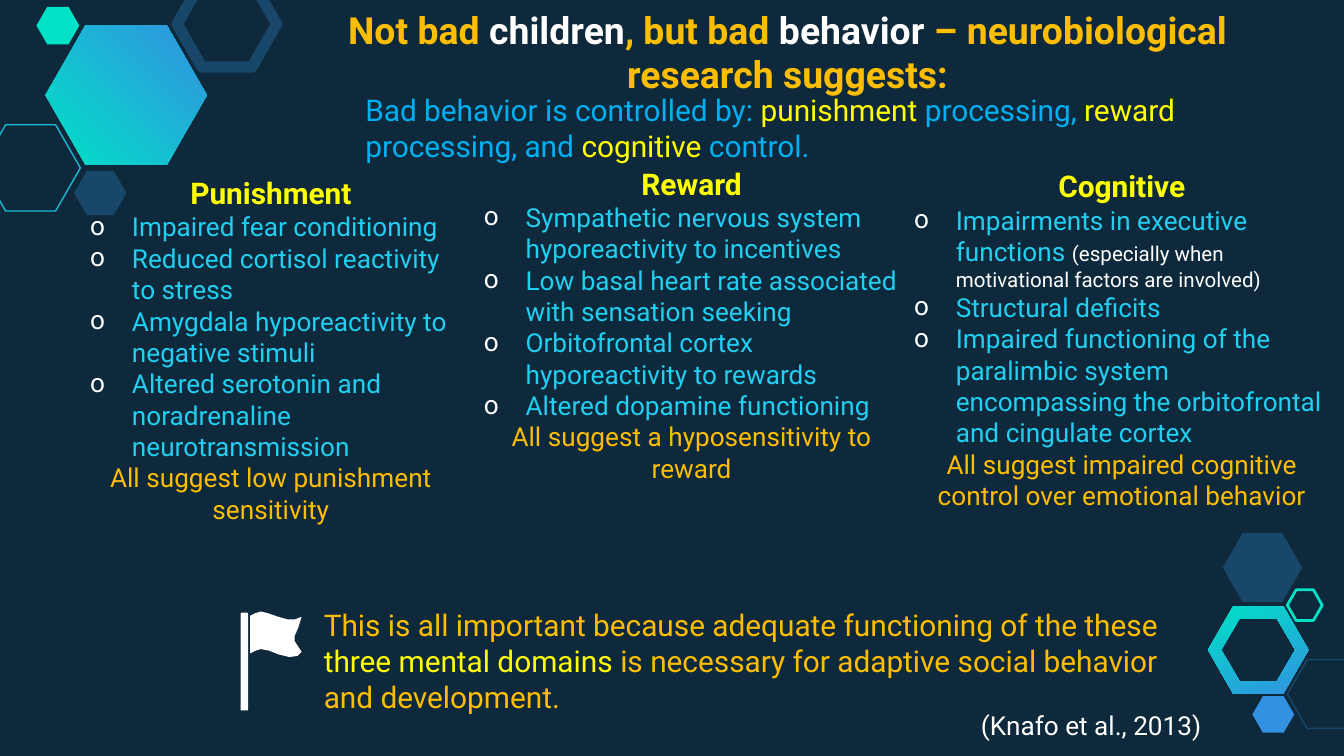
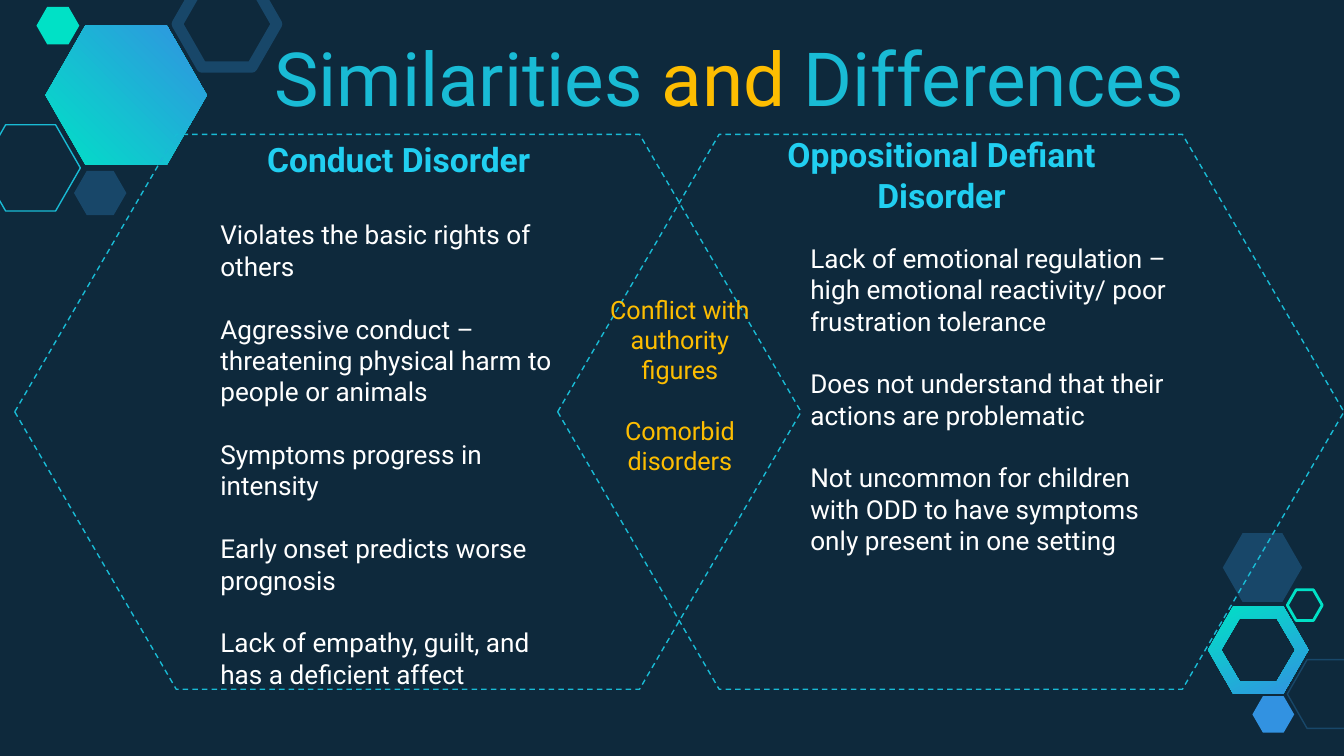
from dataclasses import dataclass
from lxml import etree
from pptx import Presentation
from pptx.dml.color import RGBColor
from pptx.enum.dml import MSO_LINE
from pptx.enum.shapes import MSO_SHAPE
from pptx.enum.text import MSO_ANCHOR, MSO_AUTO_SIZE, PP_ALIGN
from pptx.oxml.ns import qn
from pptx.util import Cm, Pt

HEXAGON = MSO_SHAPE.HEXAGON
FLAGPOLE = MSO_SHAPE.ROUND_2_SAME_RECTANGLE
DASH = MSO_LINE.DASH
TOP, BOTTOM = MSO_ANCHOR.TOP, MSO_ANCHOR.BOTTOM
LEFT, CENTER = PP_ALIGN.LEFT, PP_ALIGN.CENTER
COMPARISON_LAYOUT = 4


@dataclass(frozen=True)
class Theme:
    font: str = "Roboto"
    background: str = "0E293C"
    navy: str = "184769"
    blue: str = "3292E1"
    mint: str = "00E1C6"
    teal: str = "19BBD5"
    sky: str = "00B0F0"
    cyan: str = "21CFF1"
    gold: str = "FDBD01"
    yellow: str = "FFFF00"
    white: str = "FFFFFF"
    display: float = 40
    title: float = 20
    heading: float = 18
    lead: float = 16
    body: float = 14
    shared: float = 13.5
    aside: float = 11


@dataclass(frozen=True)
class Box:
    left: float
    top: float
    width: float
    height: float

    def inner(self, left, top, width, height):
        return Box(self.left + left, self.top + top, width, height)

    def lengths(self):
        return Cm(self.left), Cm(self.top), Cm(self.width), Cm(self.height)


@dataclass(frozen=True)
class Line:
    pieces: tuple
    size: float
    align: PP_ALIGN = LEFT
    bold: bool = False
    bullet: bool = False
    gap: float = 0


THEME = Theme()
PAGE = Box(0, 0, 25.4, 14.29)


def color(value):
    return RGBColor.from_string(value)


def set_bullet(paragraph, shown):
    properties = paragraph._p.get_or_add_pPr()
    indent = Cm(0.79) if shown else 0
    properties.set("marL", str(indent))
    properties.set("indent", str(-indent))
    if not shown:
        etree.SubElement(properties, qn("a:buNone"))
        return
    bullet_color = etree.SubElement(properties, qn("a:buClr"))
    etree.SubElement(bullet_color, qn("a:srgbClr"), val=THEME.white)
    etree.SubElement(properties, qn("a:buFont"), typeface=THEME.font)
    etree.SubElement(properties, qn("a:buChar"), char="o")


def write_line(paragraph, line):
    paragraph.alignment = line.align
    paragraph.space_before = Pt(0)
    paragraph.space_after = Pt(line.gap)
    set_bullet(paragraph, line.bullet)
    for text, tint, *size in line.pieces:
        run = paragraph.add_run()
        run.text = text
        run.font.name = THEME.font
        run.font.size = Pt(size[0] if size else line.size)
        run.font.bold = line.bold
        run.font.color.rgb = color(tint)


def write_text(shape, box, lines, anchor=TOP):
    shape.left, shape.top, shape.width, shape.height = box.lengths()
    frame = shape.text_frame
    frame.word_wrap = True
    frame.auto_size = MSO_AUTO_SIZE.NONE
    frame.vertical_anchor = anchor
    for index, line in enumerate(lines):
        paragraph = frame.add_paragraph() if index else frame.paragraphs[0]
        write_line(paragraph, line)


def add_text(slide, box, lines):
    write_text(slide.shapes.add_textbox(*box.lengths()), box, lines)


def paint(shape, fill=None, line=None, width=0.75):
    shape.shadow.inherit = False
    if fill:
        shape.fill.solid()
        shape.fill.fore_color.rgb = color(fill)
    else:
        shape.fill.background()
    if line:
        shape.line.color.rgb = color(line)
        shape.line.width = Pt(width)
    else:
        shape.line.fill.background()


def paint_gradient(shape, angle):
    paint(shape)
    shape.fill.gradient()
    shape.fill.gradient_angle = angle
    for stop, tint in zip(shape.fill.gradient_stops, (THEME.mint, THEME.blue)):
        stop.color.rgb = color(tint)


def add_hexagon(slide, box, adjustment=0.287, **style):
    hexagon = slide.shapes.add_shape(HEXAGON, *box.lengths())
    hexagon.adjustments[0] = adjustment
    paint(hexagon, **style)
    return hexagon


def hexagon_points(box):
    right, bottom, middle = box.left + box.width, box.top + box.height, box.top + box.height / 2
    notch = box.width / 4
    corners = [(box.left, middle), (box.left + notch, box.top), (right - notch, box.top),
               (right, middle), (right - notch, bottom), (box.left + notch, bottom)]
    return [(Cm(x), Cm(y)) for x, y in corners]


def add_ring(slide, box):
    outer = hexagon_points(box)
    hole = hexagon_points(box.inner(0.25, 0.23, box.width - 0.5, box.height - 0.46))[::-1]
    builder = slide.shapes.build_freeform(*outer[0])
    builder.add_line_segments(outer[1:])
    builder.move_to(*hole[0])
    builder.add_line_segments(hole[1:])
    paint_gradient(builder.convert_to_shape(), 296)


def add_top_cluster(slide, box):
    paint_gradient(add_hexagon(slide, box.inner(0.86, 0.48, 3.05, 2.64)), 45)
    add_hexagon(slide, box.inner(-0.36, 2.36, 1.88, 1.63), line=THEME.teal)
    add_hexagon(slide, box.inner(1.4, 3.23, 0.99, 0.84), fill=THEME.navy)
    add_hexagon(slide, box.inner(3.35, -0.36, 1.88, 1.63), line=THEME.navy, width=6)
    add_hexagon(slide, box.inner(0.69, 0.13, 0.81, 0.71), fill=THEME.mint)


def add_bottom_cluster(slide, box):
    add_ring(slide, box.inner(0.03, 1.46, 1.9, 1.65))
    add_hexagon(slide, box.inner(1.53, 2.47, 1.5, 1.3), line=THEME.navy)
    add_hexagon(slide, box.inner(0.87, 3.16, 0.79, 0.69), fill=THEME.blue)
    add_hexagon(slide, box.inner(0.31, 0.08, 1.5, 1.3), fill=THEME.navy)
    add_hexagon(slide, box.inner(1.53, 1.15, 0.66, 0.58), line=THEME.mint, width=1.5)


def add_flag(slide, box):
    group = slide.shapes.add_group_shape()
    pole = group.shapes.add_shape(FLAGPOLE, *box.inner(0, 0.02, 0.14, box.height).lengths())
    outline = [(0, 0.08), (0.1, 0.03), (0.2, 0), (0.33, 0.03), (0.53, 0.1), (0.71, 0.15),
               (0.84, 0.15), (0.97, 0.1), (0.91, 0.3), (0.84, 0.46), (0.84, 0.56),
               (0.97, 0.76), (0.89, 0.84), (0.74, 0.86), (0.53, 0.81), (0.36, 0.74),
               (0.2, 0.71), (0.1, 0.74), (0, 0.79)]
    points = [(Cm(box.left + 0.18 + x), Cm(box.top + y)) for x, y in outline]
    builder = group.shapes.build_freeform(*points[0])
    builder.add_line_segments(points[1:])
    for part in (pole, builder.convert_to_shape()):
        paint(part, fill=THEME.white)


def write_domain(placeholder, box, heading, findings, conclusion):
    lines = [Line(((heading, THEME.yellow),), THEME.lead, CENTER, bold=True)]
    for text, *aside in findings:
        pieces = [(text, THEME.cyan)] + [(note, THEME.white, THEME.aside) for note in aside]
        lines.append(Line(pieces, THEME.body, bullet=True))
    lines.append(Line(((conclusion, THEME.gold),), THEME.body, CENTER))
    write_text(placeholder, box, lines)


def write_disorder(heading, heading_box, body, body_box, name, traits):
    write_text(heading, heading_box, [Line(((name, THEME.cyan),), THEME.heading, CENTER, bold=True)])
    write_text(body, body_box, [Line(((trait, THEME.white),), THEME.body, gap=16.8) for trait in traits])


def new_slide(presentation):
    slide = presentation.slides.add_slide(presentation.slide_layouts[COMPARISON_LAYOUT])
    add_top_cluster(slide, PAGE)
    add_bottom_cluster(slide, PAGE.inner(22.8, 10, 2.6, 4))
    return slide


def build_research_slide(presentation, page):
    slide = new_slide(presentation)
    gold, white, sky, yellow = THEME.gold, THEME.white, THEME.sky, THEME.yellow
    subtitle, *columns = list(slide.placeholders)[1:]
    write_text(slide.shapes.title, page.inner(4.98, 0, 19.81, 1.96), [Line((
        ("Not bad ", gold), ("children", white), (", but bad ", gold), ("behavior", white),
        (" – neurobiological research suggests:", gold)), THEME.title, CENTER, bold=True)])
    write_text(subtitle, page.inner(6.65, 1.6, 16.48, 1.63), [Line((
        ("Bad behavior is controlled by: ", sky), ("punishment", yellow), (" processing, ", sky),
        ("reward ", yellow), ("processing, and ", sky), ("cognitive", yellow),
        (" control.", sky)), THEME.lead)])
    domains = [
        (page.inner(1.45, 3.18, 7.34, 8.13), "Punishment",
         [("Impaired fear conditioning",), ("Reduced cortisol reactivity to stress",),
          ("Amygdala hyporeactivity to negative stimuli",),
          ("Altered serotonin and noradrenaline neurotransmission",)],
         "All suggest low punishment sensitivity"),
        (page.inner(8.89, 3, 8.36, 8.13), "Reward",
         [("Sympathetic nervous system hyporeactivity to incentives",),
          ("Low basal heart rate associated with sensation seeking",),
          ("Orbitofrontal cortex hyporeactivity to rewards",), ("Altered dopamine functioning",)],
         "All suggest a hyposensitivity to reward"),
        (page.inner(17.02, 3.05, 8.36, 8), "Cognitive",
         [("Impairments in executive functions ",
           "(especially when motivational factors are involved)"),
          ("Structural deficits",),
          ("Impaired functioning of the paralimbic system encompassing the orbitofrontal "
           "and cingulate cortex",)],
         "All suggest impaired cognitive control over emotional behavior"),
    ]
    for column, domain in zip(columns, domains):
        write_domain(column, *domain)
    add_flag(slide, page.inner(4.55, 11.56, 1.15, 1.85))
    add_text(slide, page.inner(5.87, 11.35, 16.71, 2.31), [Line((
        ("This is all important because adequate functioning of the these ", gold),
        ("three mental domains ", yellow),
        ("is necessary for adaptive social behavior and development.", gold)), THEME.lead)])
    add_text(slide, page.inner(18.29, 13.28, 5.84, 0.86),
             [Line((("(Knafo et al., 2013)", white),), THEME.body)])


def build_comparison_slide(presentation, page):
    slide = new_slide(presentation)
    title, left_heading, left_body, right_heading, right_body = slide.placeholders
    write_text(title, page.inner(4.93, 0, 20.27, 2.54), [Line((
        ("Similarities ", THEME.teal), ("and", THEME.gold), (" Differences", THEME.teal)),
        THEME.display)], BOTTOM)
    title.text_frame.margin_top = title.text_frame.margin_bottom = Cm(0.25)
    for left in (0.28, 10.54):
        hexagon = add_hexagon(slide, page.inner(left, 2.54, 14.86, 10.49), 0.291, line=THEME.teal)
        hexagon.line.dash_style = DASH
    write_disorder(
        left_heading, page.inner(4.32, 2.49, 6.43, 1.02),
        left_body, page.inner(3.91, 4.01, 7.26, 9.25), "Conduct Disorder",
        ["Violates the basic rights of others",
         "Aggressive conduct – threatening physical harm to people or animals",
         "Symptoms progress in intensity",
         "Early onset predicts worse prognosis",
         "Lack of empathy, guilt, and has a deficient affect"])
    write_disorder(
        right_heading, page.inner(14.58, 2.41, 6.43, 1.8),
        right_body, page.inner(15.06, 4.45, 7.49, 9.25), "Oppositional Defiant Disorder",
        ["Lack of emotional regulation – high emotional reactivity/ poor frustration tolerance",
         "Does not understand that their actions are problematic",
         "Not uncommon for children with ODD to have symptoms only present in one setting"])
    add_text(slide, page.inner(11.2, 5.44, 3.3, 5.64), [
        Line(((text, THEME.gold),), THEME.shared, CENTER, gap=16.2)
        for text in ("Conflict with authority figures", "Comorbid disorders")])


def main():
    presentation = Presentation()
    presentation.slide_width, presentation.slide_height = Cm(PAGE.width), Cm(PAGE.height)
    background = presentation.slide_master.background.fill
    background.solid()
    background.fore_color.rgb = color(THEME.background)
    build_research_slide(presentation, PAGE)
    build_comparison_slide(presentation, PAGE)
    presentation.save("out.pptx")


if __name__ == "__main__":
    main()
